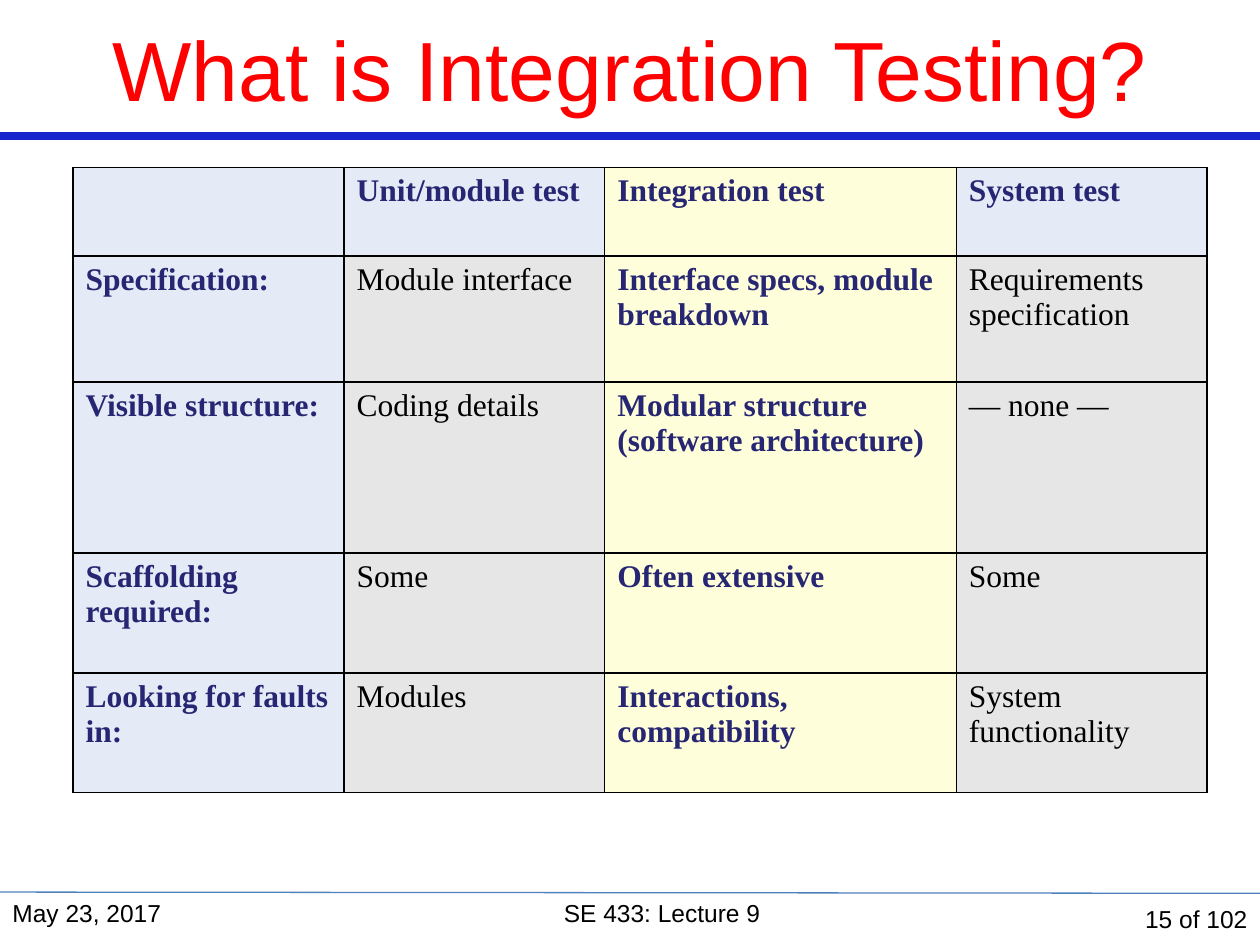
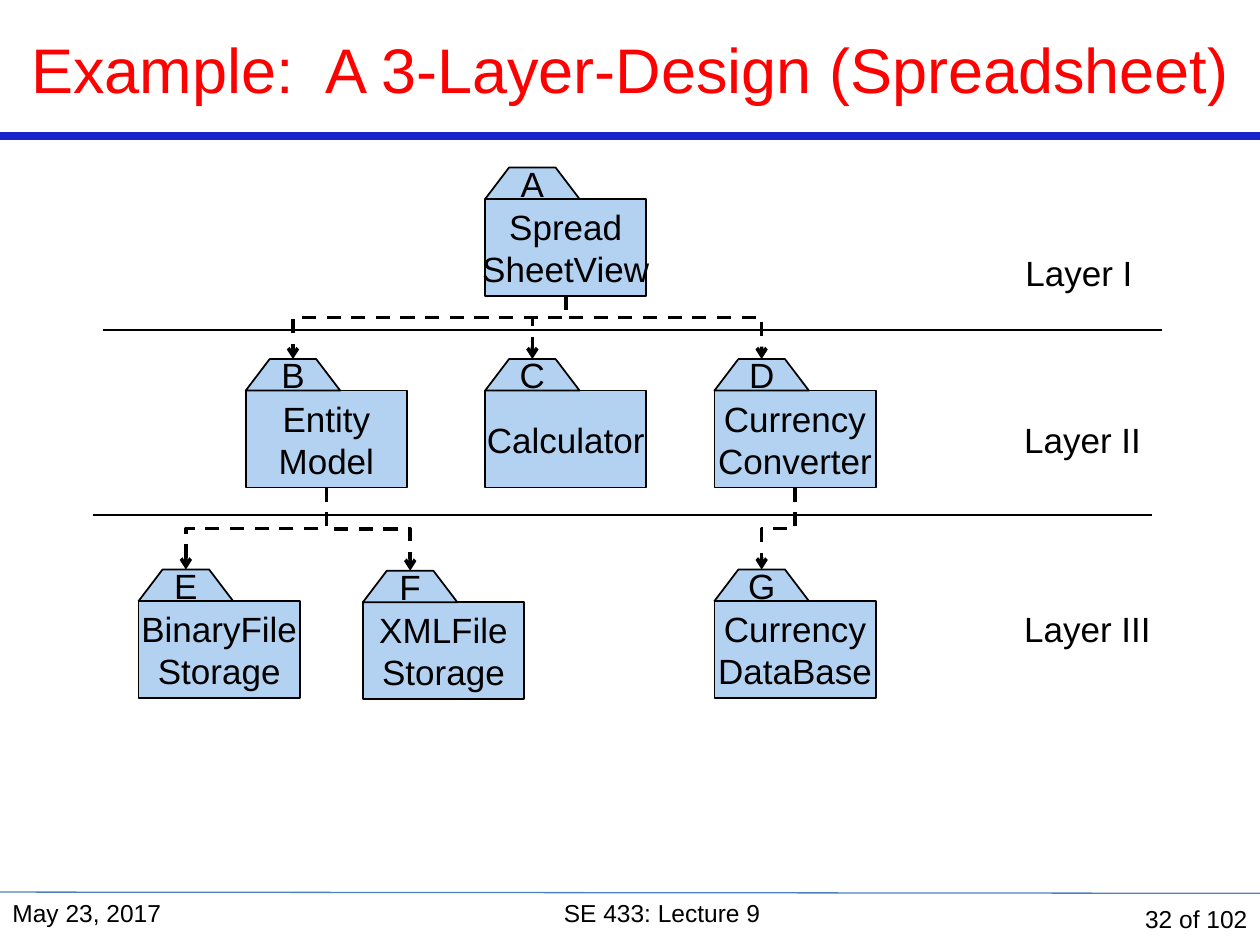
from lxml import etree
from pptx import Presentation
from pptx.dml.color import RGBColor
from pptx.enum.dml import MSO_LINE
from pptx.enum.shapes import MSO_CONNECTOR as CONN, MSO_SHAPE
from pptx.enum.text import MSO_ANCHOR as ANCHOR, MSO_AUTO_SIZE as AUTO, PP_ALIGN as ALIGN
from pptx.oxml.ns import qn
from pptx.util import Inches, Pt

RED = RGBColor(0xFF, 0x00, 0x00)
BLACK = RGBColor(0x00, 0x00, 0x00)
BAND_BLUE = RGBColor(0x18, 0x22, 0xCD)
FOOT_BLUE = RGBColor(0x4F, 0x81, 0xBD)
HEAD_BLUE = RGBColor(0x35, 0x68, 0xC7)
NAVY = RGBColor(0x26, 0x26, 0x73)
CREAM = RGBColor(0xFF, 0xFE, 0xDA)
GREY = RGBColor(0xE6, 0xE6, 0xE6)
PACKAGE_BLUE = RGBColor(0xB3, 0xD1, 0xF0)

# Content: table of test levels
TEST_LEVELS = [
    ["", "Unit/module test", "Integration test", "System test"],
    ["Specification:", "Module interface", "Interface specs, module breakdown",
     "Requirements specification"],
    ["Visible structure:", "Coding details", "Modular structure (software architecture)",
     "— none —"],
    ["Scaffolding required:", "Some", "Often extensive", "Some"],
    ["Looking for faults in:", "Modules", "Interactions, compatibility",
     "System functionality"],
]
COL_WIDTHS = [2.15, 2.07, 2.79, 1.99]
ROW_HEIGHTS = [0.7, 1, 1.36, 0.95, 0.95]
INTEGRATION_COL = 2

# Content: layered design, packages as letter: (name, left, top)
PACKAGES = {
    "A": ("Spread\vSheetView", 3.85, 1.33),
    "B": ("Entity\nModel", 1.95, 2.85),
    "C": ("Calculator", 3.85, 2.85),
    "D": ("Currency\nConverter", 5.67, 2.85),
    "E": ("BinaryFile\vStorage", 1.1, 4.52),
    "F": ("XMLFile\vStorage", 2.88, 4.53),
    "G": ("Currency\vDataBase", 5.67, 4.52),
}
# (user, used, share of the drop before the bend)
DEPENDENCIES = [("A", "B", 0.34), ("A", "C", 0.34), ("A", "D", 0.34),
                ("D", "G", 0.5), ("B", "F", 0.5), ("B", "E", 0.5)]
LAYERS = [("Layer I", 8.04, 1.95, 1.06), ("Layer II", 8.03, 3.27, 1.14),
          ("Layer III", 8.03, 4.77, 1.21)]
LAYER_LINES = [(0.82, 2.62), (0.74, 4.09)]
LAYER_LINE_W = 8.4
TAB_W, TAB_H, TAB_SLANT = 0.75, 0.25, 0.19
BOX_W, BOX_H = 1.28, 0.77


def set_text(tf, text, size, color=BLACK, align=ALIGN.LEFT, anchor=ANCHOR.TOP,
             wrap=True, font="Arial"):
    tf.text = text
    tf.word_wrap = wrap
    tf.vertical_anchor = anchor
    for p in tf.paragraphs:
        p.alignment = align
        p.font.size, p.font.name, p.font.color.rgb = Pt(size), font, color


def add_text(slide, box, text, size, **style):
    sp = slide.shapes.add_textbox(*map(Inches, box))
    set_text(sp.text_frame, text, size, **style)
    return sp


def add_line(slide, x1, y1, x2, y2, color, width, kind=CONN.STRAIGHT):
    line = slide.shapes.add_connector(kind, *map(Inches, (x1, y1, x2, y2)))
    line.line.color.rgb = color
    line.line.width = Pt(width)
    etree.SubElement(line._element.spPr, qn("a:effectLst"))
    return line


def add_slide(prs, title, size, number):
    slide = prs.slides.add_slide(prs.slide_layouts[5])
    # Title band
    add_line(slide, 0, 1.08, 10, 1.08, BAND_BLUE, 4.5)
    sp = slide.shapes.title
    sp.left, sp.top, sp.width, sp.height = map(Inches, (0, 0, 10, 1.08))
    set_text(sp.text_frame, title, size, RED, ALIGN.CENTER, ANCHOR.MIDDLE)
    sp.text_frame.auto_size = AUTO.NONE
    # Footer
    add_line(slide, 0, 7.08, 10, 7.09, FOOT_BLUE, 0.75)
    add_text(slide, (0, 7.08, 2.17, 0.42), "May 23, 2017", 14)
    add_text(slide, (2.17, 7.08, 6.17, 0.42), "SE 433: Lecture 9", 14, align=ALIGN.CENTER)
    add_text(slide, (8.33, 7.08, 1.67, 0.42), f"{number} of 102", 14,
             align=ALIGN.RIGHT, anchor=ANCHOR.MIDDLE)
    return slide


def set_borders(cell):
    tc_pr = cell._tc.get_or_add_tcPr()
    for i, side in enumerate(("lnL", "lnR", "lnT", "lnB")):
        ln = etree.Element(qn(f"a:{side}"), w=str(Pt(1)))
        fill = etree.SubElement(ln, qn("a:solidFill"))
        etree.SubElement(fill, qn("a:srgbClr"), val=str(BLACK))
        tc_pr.insert(i, ln)


def fill_cell(cell, color, alpha=None):
    cell.fill.solid()
    cell.fill.fore_color.rgb = color
    if alpha:
        clr = cell._tc.tcPr.find(f"{qn('a:solidFill')}/{qn('a:srgbClr')}")
        etree.SubElement(clr, qn("a:alpha"), val=str(alpha * 1000))


def add_test_table(slide):
    frame = slide.shapes.add_table(len(ROW_HEIGHTS), len(COL_WIDTHS), Inches(0.58),
                                   Inches(1.33), Inches(9), Inches(4.96))
    table = frame.table
    for col, width in zip(table.columns, COL_WIDTHS):
        col.width = Inches(width)
    for row, height in zip(table.rows, ROW_HEIGHTS):
        row.height = Inches(height)
    for r, texts in enumerate(TEST_LEVELS):
        for c, text in enumerate(texts):
            cell = table.cell(r, c)
            header = r == 0 or c == 0
            strong = header or c == INTEGRATION_COL
            set_text(cell.text_frame, text, 18, NAVY if strong else BLACK,
                     font="Times New Roman")
            cell.text_frame.paragraphs[0].font.bold = strong
            if c == INTEGRATION_COL:
                fill_cell(cell, CREAM)
            elif header:
                fill_cell(cell, HEAD_BLUE, alpha=13)
            else:
                fill_cell(cell, GREY)
            set_borders(cell)


def add_dependency(slide, user, used, bend):
    _, x1, y1 = PACKAGES[user]
    _, x2, y2 = PACKAGES[used]
    x1, y1 = x1 + BOX_W / 2, y1 + TAB_H + BOX_H
    x2 = x2 + TAB_W / 2
    # The elbow lies on its side, then turns so that it leaves downwards
    cx, cy = (x1 + x2) / 2, (y1 + y2) / 2
    right = x2 > x1
    half_w = (y2 - y1) / 2 * (-1 if right else 1)
    half_h = abs(x2 - x1) / 2
    line = add_line(slide, cx - half_w, cy - half_h, cx + half_w, cy + half_h,
                    BLACK, 2, CONN.ELBOW)
    line.line.dash_style = MSO_LINE.DASH
    sp_pr = line._element.spPr
    sp_pr.find(qn("a:xfrm")).set("rot", str((270 if right else 90) * 60000))
    geom = sp_pr.find(qn("a:prstGeom"))
    guides = geom.find(qn("a:avLst"))
    if guides is None:
        guides = etree.SubElement(geom, qn("a:avLst"))
    etree.SubElement(guides, qn("a:gd"), name="adj1", fmla=f"val {round(bend * 100000)}")
    etree.SubElement(sp_pr.find(qn("a:ln")), qn("a:tailEnd"), type="arrow")


def add_package(slide, letter, name, x, y):
    base = y + TAB_H
    box = slide.shapes.add_shape(MSO_SHAPE.RECTANGLE,
                                 *map(Inches, (x, base, BOX_W, BOX_H)))
    outline = slide.shapes.build_freeform(Inches(x), Inches(base))
    outline.add_line_segments([(Inches(px), Inches(py)) for px, py in (
        (x + TAB_SLANT, y), (x + TAB_W - TAB_SLANT, y), (x + TAB_W, base))])
    tab = outline.convert_to_shape()
    for sp, text in ((box, name), (tab, letter)):
        sp.shadow.inherit = False
        sp.fill.solid()
        sp.fill.fore_color.rgb = PACKAGE_BLUE
        sp.line.color.rgb = BLACK
        sp.line.width = Pt(1)
        set_text(sp.text_frame, text, 20, align=ALIGN.CENTER, anchor=ANCHOR.MIDDLE,
                 wrap=False)


def add_layer_diagram(slide):
    for x, y in LAYER_LINES:
        add_line(slide, x, y, x + LAYER_LINE_W, y, BLACK, 1)
    for text, x, y, width in LAYERS:
        sp = add_text(slide, (x, y, width, 0.43), text, 20, wrap=False)
        sp.text_frame.auto_size = AUTO.SHAPE_TO_FIT_TEXT
    for dependency in DEPENDENCIES:
        add_dependency(slide, *dependency)
    for letter, package in PACKAGES.items():
        add_package(slide, letter, *package)


def main():
    prs = Presentation()
    prs.slide_width, prs.slide_height = Inches(10), Inches(7.5)
    add_test_table(add_slide(prs, "What is Integration Testing?", 48, 15))
    add_layer_diagram(add_slide(prs, "Example:  A 3-Layer-Design (Spreadsheet)", 36, 32))
    prs.save("out.pptx")


if __name__ == "__main__":
    main()
